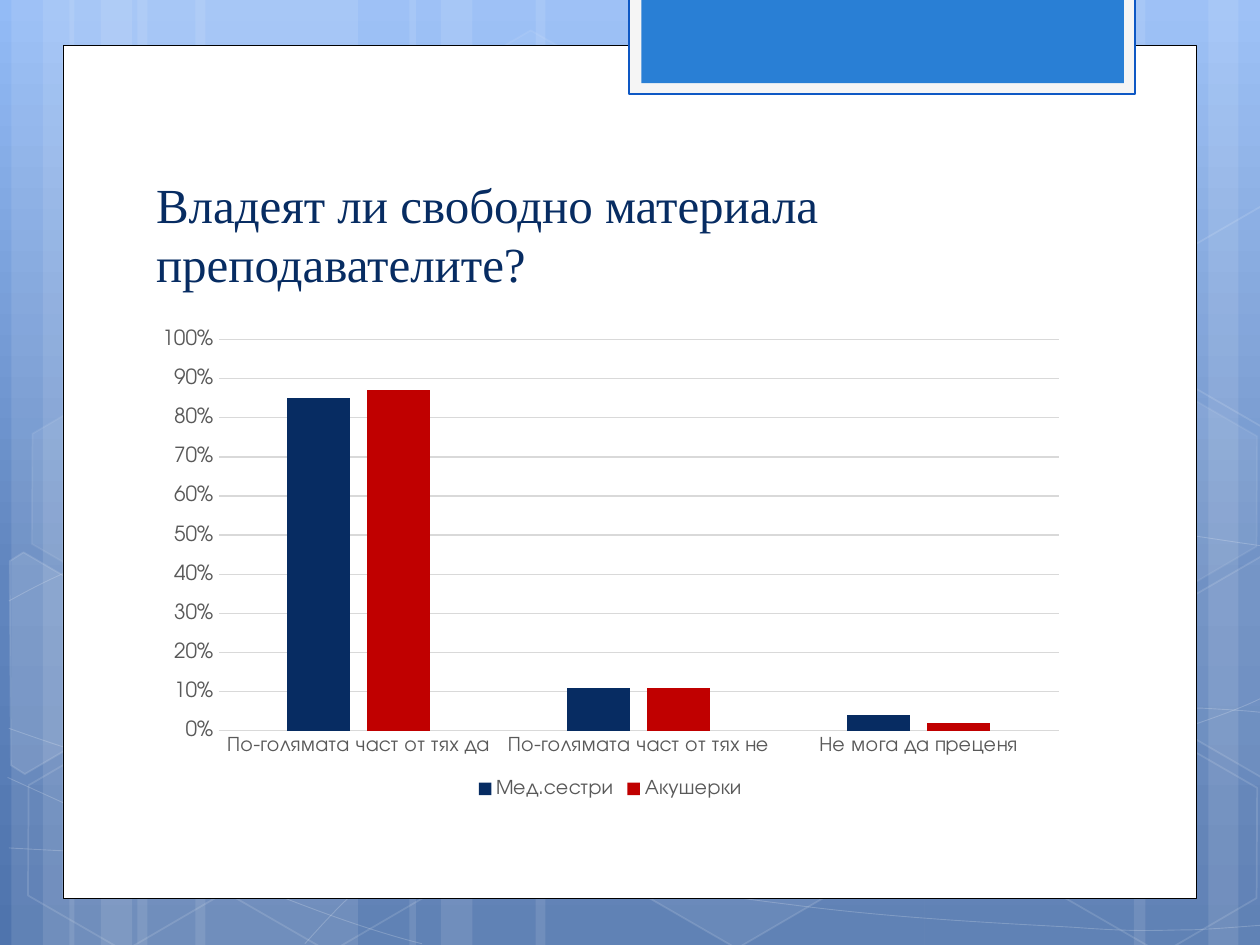
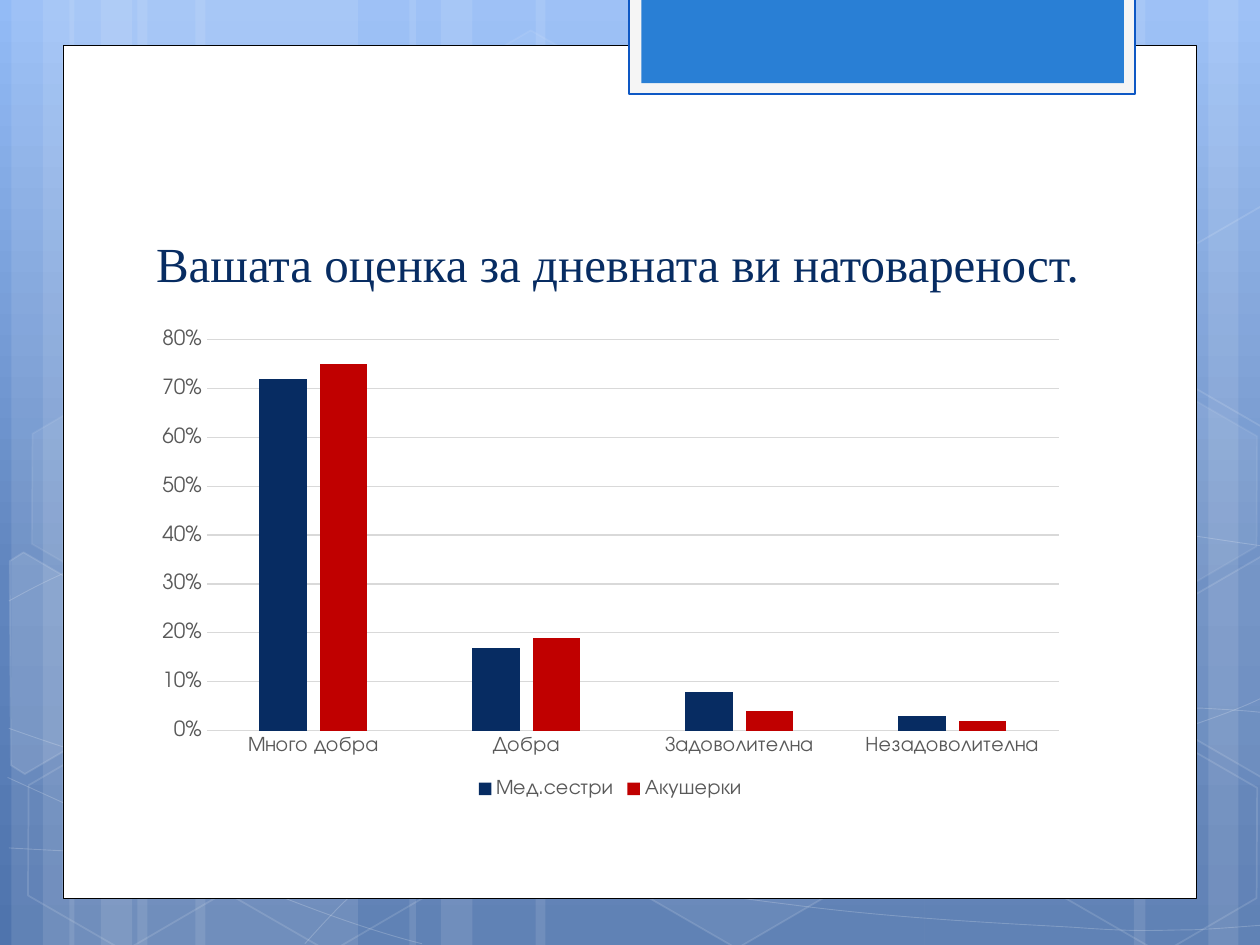
import copy
import math

import pptx
import pptx.chart.data
import pptx.dml.color
import pptx.enum.chart
import pptx.enum.shapes
import pptx.enum.text
import pptx.oxml.ns
import pptx.util
from pptx.util import Inches

RGBColor = pptx.dml.color.RGBColor
qn = pptx.oxml.ns.qn
WHITE = RGBColor(0xFF, 0xFF, 0xFF)
BLACK = RGBColor(0x00, 0x00, 0x00)
NAVY = RGBColor(0x07, 0x2C, 0x62)
RED = RGBColor(0xC0, 0x00, 0x00)
TAB_BLUE = RGBColor(0x29, 0x7F, 0xD5)
TAB_EDGE = RGBColor(0x0E, 0x58, 0xC4)
TAB_FRAME = RGBColor(0xF5, 0xF5, 0xF5)
LABEL_GREY = RGBColor(0x59, 0x59, 0x59)
GRID_GREY = RGBColor(0xD9, 0xD9, 0xD9)
SKY_STOPS = [
    (0, RGBColor(0x93, 0xBB, 0xF6)),
    (0.62, RGBColor(0x60, 0x85, 0xBE)),
    (1, RGBColor(0x4F, 0x74, 0xAD)),
]

TITLE_FONT = "Times New Roman"
CHART_FONT = "TeX Gyre Adventor"
SLIDE_WIDTH, SLIDE_HEIGHT = 10, 7.5
CARD_BOX = (0.5, 0.36, 9, 6.77)
TAB_FRAME_BOX = (4.99, -0.02, 4.02, 0.77)
TAB_BOX = (5.09, -0.02, 3.83, 0.68)
TITLE_BOX = (1.14, 1.12, 7.68, 1.25)
CHART_BOX = (1.14, 2.54, 7.41, 3.84)
TILT = 30

# left, width
STRIPES = [
    (1.09, 1.75), (0.09, 0.5), (0.34, 0.83),
    (1.55, 1.75), (0.55, 0.5), (0.8, 0.83),
    (7.34, 1.75), (9.59, 0.5), (9, 0.83),
    (4.25, 3.09), (3.25, 0.5), (3.5, 0.83),
]

# start point, then Bezier segments: two control points and an end point
WAVES = [
    [(0.07, 6.73),
     (0.61, 6.76), (1.15, 6.79), (1.9, 6.78), (2.65, 6.77), (3.58, 6.75), (4.58, 6.65),
     (5.58, 6.55), (7, 6.36), (7.92, 6.17), (8.83, 5.98), (9.77, 5.68), (10.07, 5.51)],
    [(0.07, 4.77),
     (0.36, 4.61), (0.65, 4.46), (1.21, 4.31), (1.78, 4.16), (2.59, 3.94), (3.47, 3.87),
     (4.36, 3.8), (5.44, 3.79), (6.54, 3.87), (7.64, 3.95), (9.47, 4.26), (10.07, 4.34)],
    [(0.06, 6.17), (1.27, 6.72), (2.47, 7.27), (3.35, 7.49)],
    [(0.07, 5.78),
     (0.38, 5.89), (0.7, 6), (1.28, 6.16), (1.86, 6.31), (2.73, 6.56), (3.57, 6.73),
     (4.4, 6.9), (5.45, 7.08), (6.28, 7.18), (7.11, 7.29), (8, 7.33), (8.53, 7.36),
     (9.06, 7.4), (9.19, 7.38), (9.45, 7.38), (9.71, 7.37), (9.89, 7.35), (10.07, 7.34)],
    [(2.42, 7.49),
     (2.6, 7.29), (2.78, 7.09), (3.02, 6.91), (3.26, 6.72), (3.6, 6.53), (3.88, 6.39),
     (4.16, 6.25), (4.33, 6.19), (4.69, 6.09), (5.06, 5.99), (5.73, 5.85), (6.08, 5.78),
     (6.44, 5.71), (6.49, 5.71), (6.8, 5.69), (7.11, 5.66), (7.6, 5.63), (7.94, 5.62),
     (8.29, 5.61), (8.86, 5.62), (8.86, 5.62), (8.86, 5.62), (9.53, 5.62), (9.53, 5.62),
     (9.71, 5.63), (9.88, 5.64), (9.97, 5.65), (10.06, 5.66), (10.03, 5.65), (10.06, 5.66)],
]

# left, top, fill opacity, line opacity (percent)
HEXAGONS = [
    (3.34, 0.36, 4, 8), (4.97, 5.89, 6, 12), (0.11, 5.91, 0, 12),
    (0.14, 3.12, 7, 8), (1.74, 5.92, 0, 12), (7.53, 4.53, 10, 12),
    (8.34, 5.93, 0, 12), (8.34, 3.14, 7, 8),
]

# centre of rotation, corners as they appear once tilted, fill opacity (percent)
CUT_HEXAGONS = [
    ((0.36, 5.36), [(0.08, 4.45), (0.19, 4.38), (0.96, 4.83),
                    (0.95, 5.7), (0.2, 6.14), (0.09, 6.07)], 10),
    ((9.85, 5.2), [(9.26, 4.85), (10.02, 4.41), (10.09, 4.46),
                   (10.09, 6.13), (10.02, 6.17), (9.26, 5.73)], 4),
    ((9.85, 2.41), [(9.26, 2.07), (10.02, 1.63), (10.1, 1.68),
                    (10.09, 3.35), (10.02, 3.39), (9.26, 2.95)], 0),
]

SERIES_COLORS = {"Мед.сестри": NAVY, "Акушерки": RED}
QUESTIONS = [
    {
        "title": "Владеят ли свободно материала преподавателите?",
        "categories": ["По-голямата част от тях да", "По-голямата част от тях не",
                       "Не мога да преценя"],
        "values": [(0.85, 0.11, 0.04), (0.87, 0.11, 0.02)],
        "maximum": 1,
    },
    {
        "title": "Вашата оценка за дневната ви натовареност.",
        "categories": ["Много добра", "Добра", "Задоволителна", "Незадоволителна"],
        "values": [(0.72, 0.17, 0.08, 0.03), (0.75, 0.19, 0.04, 0.02)],
        "maximum": 0.8,
    },
]


def inches(box):
    return [Inches(length) for length in box]


def set_opacity(shape, color_query, percent):
    for color in shape.element.spPr.xpath(color_query):
        color.append(color.makeelement(qn("a:alpha"), {"val": str(percent * 1000)}))


def paint(shape, fill=None, line=None, line_width=1, fill_opacity=100, line_opacity=100):
    shape.shadow.inherit = False
    if fill is None or fill_opacity == 0:
        shape.fill.background()
    else:
        shape.fill.solid()
        shape.fill.fore_color.rgb = fill
        if fill_opacity < 100:
            set_opacity(shape, "a:solidFill/a:srgbClr", fill_opacity)
    if line is None:
        shape.line.fill.background()
    else:
        shape.line.color.rgb = line
        shape.line.width = pptx.util.Pt(line_width)
        if line_opacity < 100:
            set_opacity(shape, "a:ln/a:solidFill/a:srgbClr", line_opacity)


def add_rectangle(slide, box, **style):
    kind = pptx.enum.shapes.MSO_SHAPE.RECTANGLE
    paint(slide.shapes.add_shape(kind, *inches(box)), **style)


def add_outline(slide, points, close):
    start, *others = [inches(point) for point in points]
    builder = slide.shapes.build_freeform(*start)
    builder.add_line_segments(others, close=close)
    return builder.convert_to_shape()


def bend(shape):
    """Turn every three straight segments into one cubic Bezier segment."""
    segments = shape.element.spPr.xpath(".//a:lnTo")
    for index in range(0, len(segments), 3):
        curve = segments[index].makeelement(qn("a:cubicBezTo"), {})
        segments[index].addprevious(curve)
        for segment in segments[index:index + 3]:
            curve.append(segment[0])
            segment.getparent().remove(segment)


def untilt(point, center):
    angle = math.radians(-TILT)
    x, y = point[0] - center[0], point[1] - center[1]
    return (center[0] + x * math.cos(angle) - y * math.sin(angle),
            center[1] + x * math.sin(angle) + y * math.cos(angle))


def set_sky(layout):
    fill = layout.background.fill
    fill.gradient()
    fill.gradient_angle = 270
    first_stop = next(layout.element.iter(qn("a:gs")))
    first_stop.addnext(copy.deepcopy(first_stop))
    for stop, (position, color) in zip(fill.gradient_stops, SKY_STOPS):
        stop.position = position
        stop.color.rgb = color


def add_pattern(slide):
    for left, width in STRIPES:
        add_rectangle(slide, (left, 0, width, SLIDE_HEIGHT), fill=WHITE, fill_opacity=10)
    for wave in WAVES:
        shape = add_outline(slide, wave, close=False)
        bend(shape)
        paint(shape, line=WHITE, line_width=0.5, line_opacity=20)
    for left, top, fill_opacity, line_opacity in HEXAGONS:
        hexagon = slide.shapes.add_shape(pptx.enum.shapes.MSO_SHAPE.HEXAGON,
                                         *inches((left, top, 1.75, 1.52)))
        hexagon.adjustments[0] = 0.285
        hexagon.rotation = TILT
        paint(hexagon, fill=WHITE, line=WHITE,
              fill_opacity=fill_opacity, line_opacity=line_opacity)
    for center, corners, fill_opacity in CUT_HEXAGONS:
        shape = add_outline(slide, [untilt(corner, center) for corner in corners], close=True)
        shape.rotation = TILT
        paint(shape, fill=WHITE, line=WHITE, fill_opacity=fill_opacity, line_opacity=12)


def add_card(slide):
    add_rectangle(slide, CARD_BOX, fill=WHITE, line=BLACK, line_width=0.5)
    add_rectangle(slide, TAB_FRAME_BOX, fill=TAB_FRAME, line=TAB_EDGE, line_width=1.25)
    add_rectangle(slide, TAB_BOX, fill=TAB_BLUE)


def move_to_layout(slide, layout):
    """Hand the shapes of a slide to its layout, in place of the layout's placeholders."""
    for placeholder in list(layout.placeholders):
        placeholder.element.getparent().remove(placeholder.element)
    for shape in list(slide.shapes):
        layout.element.cSld.spTree.append(shape.element)


def style_font(font, name, size, color):
    font.name = name
    font.size = pptx.util.Pt(size)
    font.color.rgb = color


def add_title(slide, box, title):
    text_frame = slide.shapes.add_textbox(*inches(box)).text_frame
    text_frame.word_wrap = True
    text_frame.vertical_anchor = pptx.enum.text.MSO_ANCHOR.BOTTOM
    text_frame.text = title
    style_font(text_frame.paragraphs[0].runs[0].font, TITLE_FONT, 28, NAVY)


def style_line(line):
    line.color.rgb = GRID_GREY
    line.width = pptx.util.Pt(0.75)


def add_answer_chart(slide, box, question):
    data = pptx.chart.data.CategoryChartData(number_format="0%")
    data.categories = question["categories"]
    for name, values in zip(SERIES_COLORS, question["values"]):
        data.add_series(name, values)
    kind = pptx.enum.chart.XL_CHART_TYPE.COLUMN_CLUSTERED
    chart = slide.shapes.add_chart(kind, *inches(box), data).chart
    chart.has_title = False
    style_font(chart.font, CHART_FONT, 10, BLACK)

    plot = chart.plots[0]
    plot.gap_width = 219
    plot.overlap = -27
    plot.vary_by_categories = False
    for series in plot.series:
        series.format.fill.solid()
        series.format.fill.fore_color.rgb = SERIES_COLORS[series.name]

    chart.has_legend = True
    chart.legend.position = pptx.enum.chart.XL_LEGEND_POSITION.BOTTOM
    chart.legend.include_in_layout = False

    category_axis, value_axis = chart.category_axis, chart.value_axis
    for axis in (category_axis, value_axis):
        axis.major_tick_mark = pptx.enum.chart.XL_TICK_MARK.NONE
    for labels in (category_axis.tick_labels, value_axis.tick_labels, chart.legend):
        style_font(labels.font, CHART_FONT, 11.9, LABEL_GREY)
    style_line(category_axis.format.line)
    style_line(value_axis.major_gridlines.format.line)
    value_axis.format.line.fill.background()
    value_axis.minimum_scale = 0
    value_axis.maximum_scale = question["maximum"]
    value_axis.major_unit = 0.1
    value_axis.tick_labels.number_format = "0%"
    value_axis.tick_labels.number_format_is_linked = False


def main():
    presentation = pptx.Presentation()
    presentation.slide_width = Inches(SLIDE_WIDTH)
    presentation.slide_height = Inches(SLIDE_HEIGHT)
    layout = presentation.slide_layouts[6]
    slides = [presentation.slides.add_slide(layout) for _ in QUESTIONS]
    set_sky(layout)
    add_pattern(slides[0])
    add_card(slides[0])
    move_to_layout(slides[0], layout)
    for slide, question in zip(slides, QUESTIONS):
        add_title(slide, TITLE_BOX, question["title"])
        add_answer_chart(slide, CHART_BOX, question)
    presentation.save("out.pptx")


if __name__ == "__main__":
    main()
